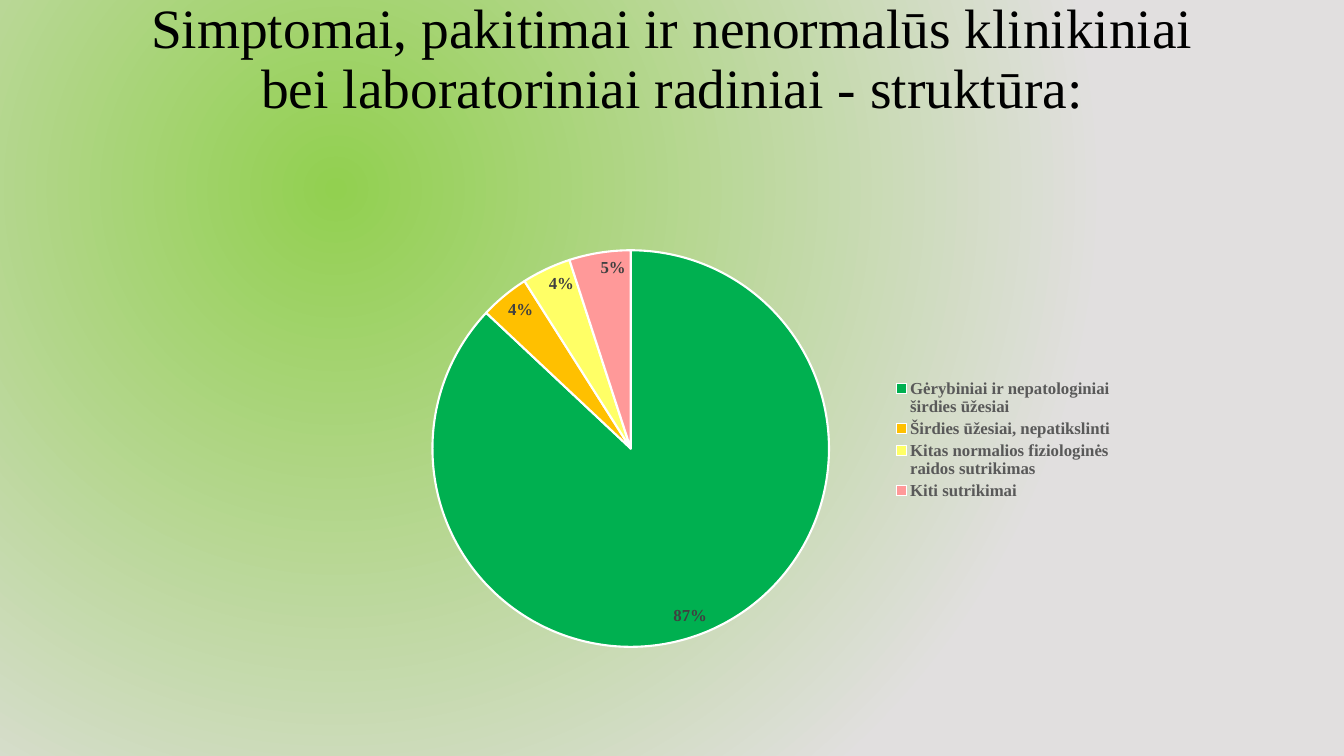
import pptx
import pptx.chart.data
import pptx.dml.color
import pptx.enum.chart
import pptx.enum.text
import pptx.oxml
import pptx.oxml.ns
import pptx.util
from pptx.util import Cm

RGBColor = pptx.dml.color.RGBColor
BLACK = RGBColor(0x00, 0x00, 0x00)
WHITE = RGBColor(0xFF, 0xFF, 0xFF)
LIME = RGBColor(0x92, 0xD0, 0x50)
PALE_GREY = RGBColor(0xE1, 0xDF, 0xDF)
LEGEND_GREY = RGBColor(0x59, 0x59, 0x59)
LABEL_GREY = RGBColor(0x40, 0x40, 0x40)
GREEN = RGBColor(0x00, 0xB0, 0x50)
AMBER = RGBColor(0xFF, 0xC0, 0x00)
YELLOW = RGBColor(0xFF, 0xFF, 0x66)
PINK = RGBColor(0xFF, 0x99, 0x99)

TITLE = "Simptomai, pakitimai ir nenormalūs klinikiniai bei laboratoriniai radiniai - struktūra:"
FINDINGS = [
    ("Gėrybiniai ir nepatologiniai širdies ūžesiai", 87, GREEN),
    ("Širdies ūžesiai, nepatikslinti", 4, AMBER),
    ("Kitas normalios fiziologinės raidos sutrikimas", 4, YELLOW),
    ("Kiti sutrikimai", 5, PINK),
]


def style_font(font, name="Times New Roman", size=12, color=BLACK, bold=False):
    font.name = name
    font.size = pptx.util.Pt(size)
    font.bold = bold
    font.color.rgb = color


def write_text(para, text, **font_format):
    span = para.add_run()
    span.text = text
    style_font(span.font, **font_format)


def chart_layout(x, y, w, h, inner=False):
    """Return a manual chart layout, in fractions of the chart's frame."""
    target = '<c:layoutTarget val="inner"/>' if inner else ""
    sizes = "".join(f'<c:{key} val="{value}"/>' for key, value in zip("xywh", (x, y, w, h)))
    return pptx.oxml.parse_xml(
        f'<c:layout {pptx.oxml.ns.nsdecls("c")}><c:manualLayout>{target}'
        f'<c:xMode val="edge"/><c:yMode val="edge"/>{sizes}</c:manualLayout></c:layout>')


def place_part(part, index, layout):
    for old in part.findall(pptx.oxml.ns.qn("c:layout")):
        part.remove(old)
    part.insert(index, layout)


class SlideBuilder:
    def __init__(self, deck):
        self.slide = deck.slides.add_slide(deck.slide_layouts[5])

    def radial_background(self, inner, outer):
        fill = self.slide.background.fill
        fill.gradient()
        for stop, color, position in zip(fill.gradient_stops, (inner, outer), (0, 1)):
            stop.color.rgb = color
            stop.position = position
        linear = self.slide.element.find(".//" + pptx.oxml.ns.qn("a:lin"))
        linear.getparent().replace(linear, pptx.oxml.parse_xml(
            f'<a:path {pptx.oxml.ns.nsdecls("a")} path="circle">'
            '<a:fillToRect l="50000" t="50000" r="100000" b="100000"/></a:path>'))

    def title(self, text, left, top, width, height, **font_format):
        box = self.slide.shapes.title
        box.left, box.top, box.width, box.height = left, top, width, height
        frame = box.text_frame
        frame.word_wrap = True
        frame.auto_size = pptx.enum.text.MSO_AUTO_SIZE.NONE
        frame.vertical_anchor = pptx.enum.text.MSO_ANCHOR.MIDDLE
        frame.margin_bottom = Cm(1.88)
        para = frame.paragraphs[0]
        para.alignment = pptx.enum.text.PP_ALIGN.CENTER
        para.line_spacing = 0.9
        write_text(para, text, **font_format)

    def pie(self, findings, left, top, width, height):
        names, values, colors = zip(*findings)
        data = pptx.chart.data.CategoryChartData()
        data.categories = names
        data.add_series("Series 1", values)
        chart = self.slide.shapes.add_chart(
            pptx.enum.chart.XL_CHART_TYPE.PIE, left, top, width, height, data).chart
        chart.has_title = False
        style_font(chart.font, name="Calibri", size=10)
        plot = chart.plots[0]
        plot.vary_by_categories = True
        for index, color in enumerate(colors):
            slice_format = plot.series[0].points[index].format
            slice_format.fill.solid()
            slice_format.fill.fore_color.rgb = color
            slice_format.line.color.rgb = WHITE
            slice_format.line.width = pptx.util.Pt(1.5)
        self.pie_labels(plot.series[0].data_labels)
        self.pie_legend(chart)
        plot_area = chart.element.find(".//" + pptx.oxml.ns.qn("c:plotArea"))
        place_part(plot_area, 0, chart_layout(0.08, 0.08, 0.53, 0.89, inner=True))

    def pie_labels(self, labels):
        labels.show_percentage = True
        labels.show_value = False
        labels.number_format = "0%"
        labels.number_format_is_linked = False
        labels.position = pptx.enum.chart.XL_LABEL_POSITION.INSIDE_END
        style_font(labels.font, color=LABEL_GREY, bold=True)

    def pie_legend(self, chart):
        chart.has_legend = True
        legend = chart.legend
        legend.position = pptx.enum.chart.XL_LEGEND_POSITION.RIGHT
        legend.include_in_layout = False
        style_font(legend.font, color=LEGEND_GREY, bold=True)
        element = chart.element.find(".//" + pptx.oxml.ns.qn("c:legend"))
        place_part(element, 1, chart_layout(0.69, 0.36, 0.3, 0.29))


def main():
    deck = pptx.Presentation()
    deck.slide_width, deck.slide_height = Cm(33.87), Cm(19.05)
    builder = SlideBuilder(deck)
    builder.radial_background(LIME, PALE_GREY)
    builder.title(TITLE, Cm(2.97), Cm(0.38), Cm(27.94), Cm(4.04), size=39.6)
    builder.pie(FINDINGS, Cm(9.35), Cm(5.41), Cm(18.97), Cm(11.23))
    deck.save("out.pptx")


if __name__ == "__main__":
    main()
